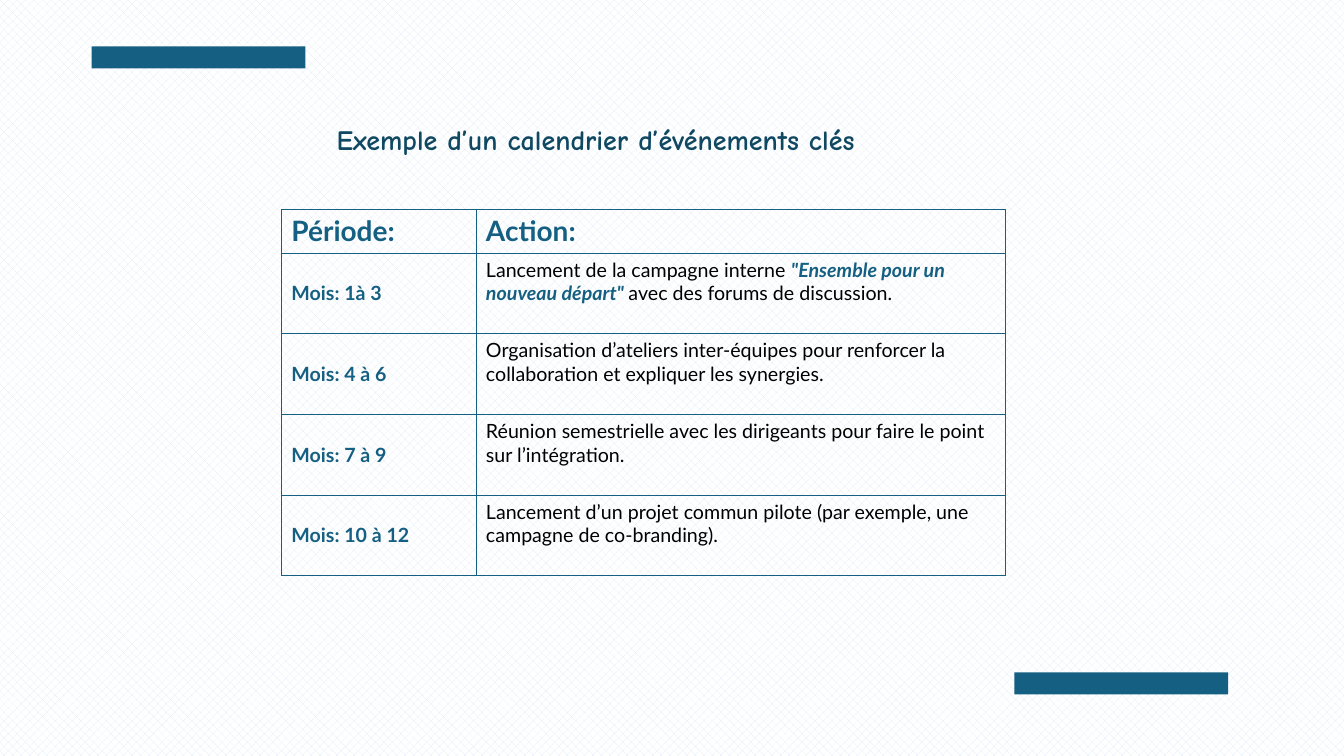
import pptx
import pptx.util
import pptx.dml.color
import pptx.enum.dml
import pptx.enum.shapes
import pptx.enum.text
import pptx.oxml
import pptx.oxml.ns

Inches = pptx.util.Inches
RGBColor = pptx.dml.color.RGBColor
ANCHOR = pptx.enum.text.MSO_ANCHOR

BLUE = RGBColor(0x15, 0x60, 0x82)
NAVY = RGBColor(0x10, 0x48, 0x62)
PALE = RGBColor(0xDC, 0xEA, 0xF7)
WHITE = RGBColor(0xFF, 0xFF, 0xFF)
BLACK = RGBColor(0, 0, 0)

PLAN = [
    ("Mois: 1à 3", ["Lancement de la campagne interne ",
                    "\"Ensemble pour un nouveau départ\" ",
                    "avec des forums de discussion."]),
    ("Mois: 4 à 6", ["Organisation d’ateliers inter-équipes pour renforcer la "
                     "collaboration et expliquer les synergies."]),
    ("Mois: 7 à 9", ["Réunion semestrielle avec les dirigeants pour faire le "
                     "point sur l’intégration."]),
    ("Mois: 10 à 12", ["Lancement d’un projet commun pilote (par exemple, une "
                       "campagne de co-branding)."]),
]


def write(frame, text, size=14, font="Lato", color=BLUE, bold=True, italic=False):
    """Append one formatted run to the first paragraph."""
    run = frame.paragraphs[0].add_run()
    run.text = text
    style = run.font
    style.size = pptx.util.Pt(size)
    style.name = font
    style.color.rgb = color
    style.bold = bold
    style.italic = italic


def add_bar(slide, left, top, width, height):
    bar = slide.shapes.add_shape(pptx.enum.shapes.MSO_SHAPE.RECTANGLE,
                                 left, top, width, height)
    bar.shadow.inherit = False
    bar.fill.solid()
    bar.fill.fore_color.rgb = BLUE
    bar.line.fill.background()


def add_title(slide, left, top, width, height):
    frame = slide.shapes.add_textbox(left, top, width, height).text_frame
    frame.word_wrap = True
    frame.vertical_anchor = ANCHOR.TOP
    write(frame, "Exemple d’un calendrier d’événements clés",
          size=20, font="Comic Neue", color=NAVY)


def style_cell(cell, anchor):
    """Thin blue borders, no fill."""
    props = cell._tc.get_or_add_tcPr()
    for side in "LRTB":
        props.append(pptx.oxml.parse_xml(
            f'<a:ln{side} {pptx.oxml.ns.nsdecls("a")} w="3175"><a:solidFill>'
            f'<a:srgbClr val="{BLUE}"/></a:solidFill></a:ln{side}>'))
    cell.fill.background()
    cell.vertical_anchor = anchor


def add_plan(slide, left, top, width, height):
    head, first = Inches(0.44), Inches(1.93)
    table = slide.shapes.add_table(len(PLAN) + 1, 2, left, top, width, height).table
    table.first_row = table.horz_banding = False
    table.columns[0].width = first
    table.columns[1].width = width - first
    for row in table.rows:
        row.height = (height - head) // len(PLAN)
    table.rows[0].height = head

    # Header row
    for col, label in enumerate(("Période:", "Action:")):
        cell = table.cell(0, col)
        style_cell(cell, ANCHOR.MIDDLE)
        write(cell.text_frame, label, size=20)

    # One row per period; every second run is stressed
    for row, (months, parts) in enumerate(PLAN, 1):
        period, action = table.cell(row, 0), table.cell(row, 1)
        style_cell(period, ANCHOR.MIDDLE)
        style_cell(action, ANCHOR.TOP)
        write(period.text_frame, months)
        for index, part in enumerate(parts):
            stress = index % 2 == 1
            write(action.text_frame, part, color=BLUE if stress else BLACK,
                  bold=stress, italic=stress)


def main():
    deck = pptx.Presentation()
    deck.slide_width, deck.slide_height = Inches(13.33), Inches(7.5)
    slide = deck.slides.add_slide(deck.slide_layouts[6])

    # Background pattern
    fill = slide.background.fill
    fill.patterned()
    fill.pattern = pptx.enum.dml.MSO_PATTERN.from_xml("pct40")
    fill.fore_color.rgb = PALE
    fill.back_color.rgb = WHITE

    # Content
    add_plan(slide, Inches(2.79), Inches(2.07), Inches(7.18), Inches(3.64))
    add_title(slide, Inches(3.24), Inches(1.17), Inches(5.94), Inches(0.67))
    for left, top in ((0.91, 0.46), (10.06, 6.67)):
        add_bar(slide, Inches(left), Inches(top), Inches(2.12), Inches(0.22))

    deck.save("out.pptx")


if __name__ == "__main__":
    main()
